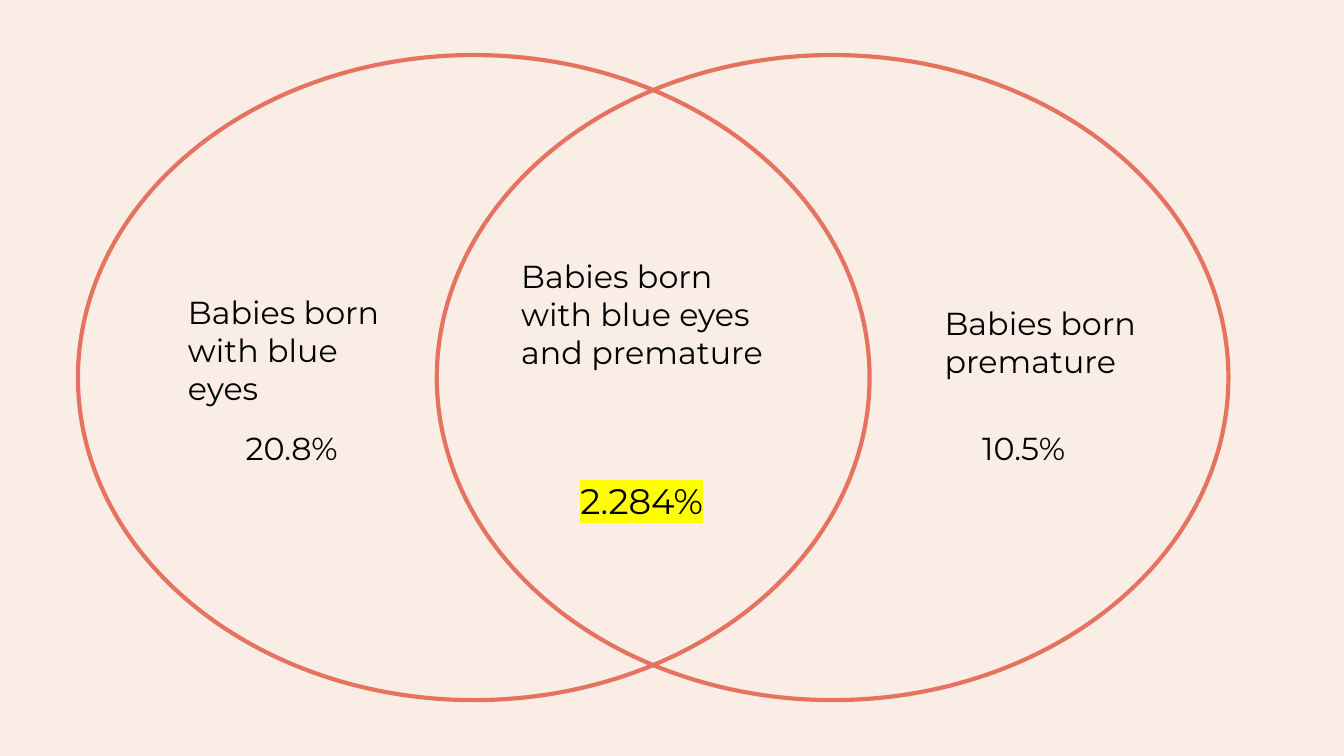
from dataclasses import dataclass

from lxml.etree import SubElement
from pptx import Presentation
from pptx.dml.color import RGBColor
from pptx.enum.shapes import MSO_SHAPE
from pptx.enum.text import MSO_ANCHOR, PP_ALIGN
from pptx.oxml.ns import qn
from pptx.util import Inches, Pt


@dataclass(frozen=True)
class Theme:
    background: str = "F9EDE5"
    outline: str = "E57360"
    ink: str = "000000"
    marker: str = "FFFF00"
    font: str = "Montserrat"
    body: float = 17
    result: float = 19
    outline_width: float = 2.25


THEME = Theme()
SLIDE_WIDTH = 10
SLIDE_HEIGHT = SLIDE_WIDTH * 9 / 16

# Venn circles: left edges, with a shared top, width and height
CIRCLE_LEFTS = (0.58, 3.25)
CIRCLE_TOP, CIRCLE_WIDTH, CIRCLE_HEIGHT = 0.41, 5.89, 4.8

# Text and its box: left, top, width, height
LABELS = [
    ("Babies born with blue eyes", (1.3, 2.08, 1.85, 0.85)),
    ("Babies born premature", (6.93, 2.16, 2.06, 0.77)),
    ("Babies born with blue eyes and premature", (3.78, 1.81, 2.06, 1.06)),
    ("20.8%", (1.73, 3.09, 1, 0.58)),
    ("10.5%", (7.21, 3.09, 1, 0.58)),
]
OVERLAP_SHARE = ("2.284%", (4.22, 3.13, 1.24, 0.85))


def add_circle(group, left):
    box = (left, CIRCLE_TOP, CIRCLE_WIDTH, CIRCLE_HEIGHT)
    circle = group.shapes.add_shape(MSO_SHAPE.OVAL, *map(Inches, box))
    circle.shadow.inherit = False
    circle.fill.background()
    circle.line.color.rgb = RGBColor.from_string(THEME.outline)
    circle.line.width = Pt(THEME.outline_width)


def add_label(slide, wording, box, size=THEME.body, anchor=MSO_ANCHOR.TOP):
    """Add a wrapped text box and return its run."""
    frame = slide.shapes.add_textbox(*map(Inches, box)).text_frame
    frame.word_wrap = True
    frame.vertical_anchor = anchor
    frame.margin_left = frame.margin_right = Inches(0.1)
    frame.margin_top = frame.margin_bottom = Inches(0.1)
    paragraph = frame.paragraphs[0]
    paragraph.alignment = PP_ALIGN.LEFT
    run = paragraph.add_run()
    run.text = wording
    run.font.size = Pt(size)
    run.font.name = THEME.font
    run.font.color.rgb = RGBColor.from_string(THEME.ink)
    return run


def highlight(run, color):
    properties = run._r.get_or_add_rPr()
    marker = SubElement(properties, qn("a:highlight"))
    SubElement(marker, qn("a:srgbClr"), val=color)
    # The schema wants the highlight before the typeface
    properties.find(qn("a:latin")).addprevious(marker)


def main():
    presentation = Presentation()
    presentation.slide_width = Inches(SLIDE_WIDTH)
    presentation.slide_height = Inches(SLIDE_HEIGHT)
    slide = presentation.slides.add_slide(presentation.slide_layouts[6])
    slide.background.fill.solid()
    slide.background.fill.fore_color.rgb = RGBColor.from_string(THEME.background)

    venn = slide.shapes.add_group_shape()
    for left in CIRCLE_LEFTS:
        add_circle(venn, left)
    for wording, box in LABELS:
        add_label(slide, wording, box)
    share = add_label(slide, *OVERLAP_SHARE, THEME.result, MSO_ANCHOR.BOTTOM)
    highlight(share, THEME.marker)

    presentation.save("out.pptx")


if __name__ == "__main__":
    main()
